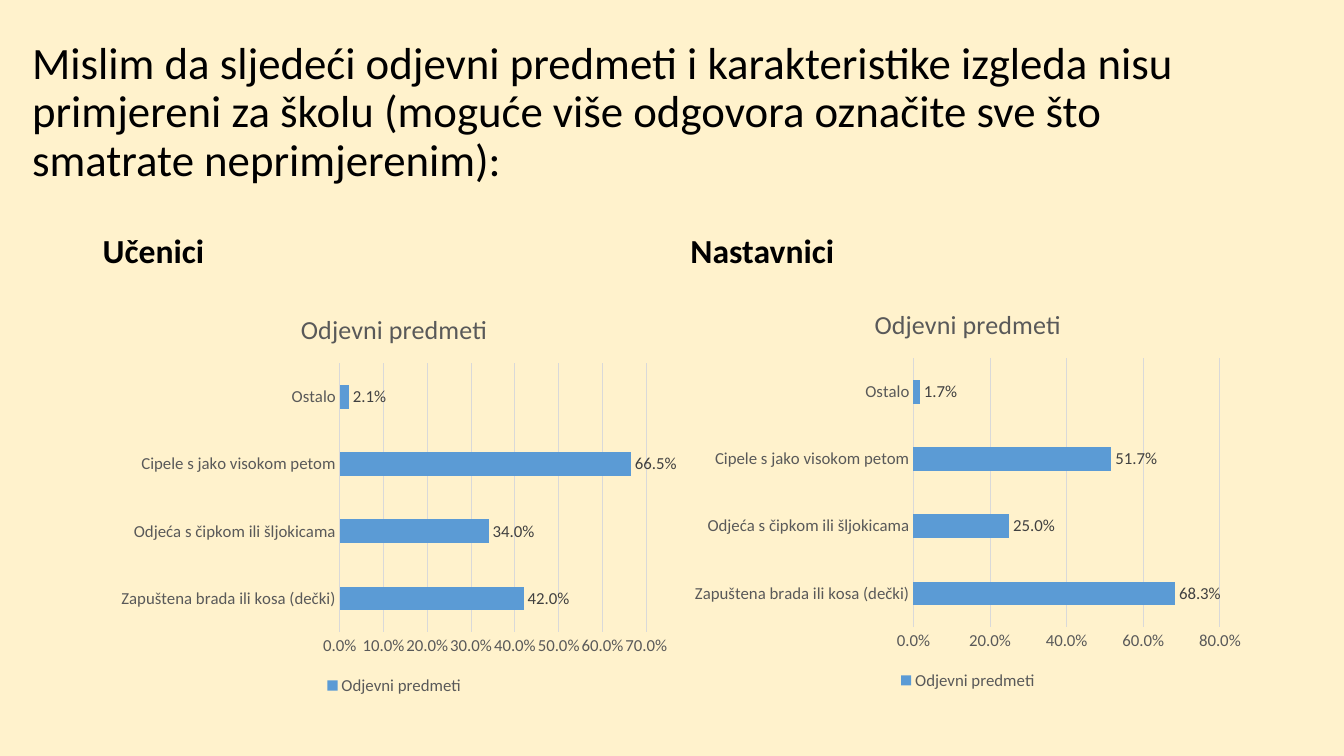
from pptx import Presentation
from pptx.chart.data import CategoryChartData
from pptx.dml.color import RGBColor
from pptx.enum.chart import XL_CHART_TYPE, XL_LABEL_POSITION, XL_LEGEND_POSITION, XL_TICK_MARK
from pptx.enum.text import MSO_ANCHOR
from pptx.util import Inches, Pt

BAR = XL_CHART_TYPE.BAR_CLUSTERED
OUTSIDE_END = XL_LABEL_POSITION.OUTSIDE_END
BOTTOM = XL_LEGEND_POSITION.BOTTOM
NO_TICK = XL_TICK_MARK.NONE
MIDDLE, LOW = MSO_ANCHOR.MIDDLE, MSO_ANCHOR.BOTTOM

# Content
FONT = "Calibri"
BACKGROUND, BLACK, GREY, DARK, GRID, BLUE = (
    "FFF2CC", "000000", "595959", "404040", "D9D9D9", "5B9BD5")
PERCENT = "0.0%"
TITLE = ("Mislim da sljedeći odjevni predmeti i karakteristike izgleda nisu "
         "primjereni za školu (moguće više odgovora označite sve što\v"
         "smatrate neprimjerenim):")
TOPIC = "Odjevni predmeti"
ITEMS = ["Zapuštena brada ili kosa (dečki)", "Odjeća s čipkom ili šljokicama",
         "Cipele s jako visokom petom", "Ostalo"]
GROUPS = [
    {"name": "Učenici", "head": (0.92, 1.84, 5.64, 0.9), "chart": (1.09, 2.91, 5.64, 4.03),
     "values": [0.42, 0.34, 0.665, 0.021], "top": 0.7, "step": 0.1},
    {"name": "Nastavnici", "head": (6.75, 1.84, 5.67, 0.9), "chart": (6.78, 2.86, 5.64, 4.03),
     "values": [0.683, 0.25, 0.517, 0.017], "top": 0.8, "step": 0.2},
]


def color(value):
    return RGBColor.from_string(value)


def set_all(obj, **values):
    for name, value in values.items():
        setattr(obj, name, value)


def style_font(font, size, hex_color, bold=False):
    set_all(font, name=FONT, size=Pt(size), bold=bold)
    font.color.rgb = color(hex_color)


def style_line(line, hex_color):
    line.color.rgb = color(hex_color)
    line.width = Pt(0.75)


def add_text(slide, box, text, size, anchor, bold=False):
    tf = slide.shapes.add_textbox(*map(Inches, box)).text_frame
    set_all(tf, word_wrap=True, vertical_anchor=anchor)
    p = tf.paragraphs[0]
    p.text = text
    p.line_spacing = 0.9
    style_font(p.font, size, BLACK, bold)
    for r in p.runs:
        style_font(r.font, size, BLACK, bold)


def add_bars(slide, group):
    data = CategoryChartData(number_format=PERCENT)
    data.categories = ITEMS
    data.add_series(TOPIC, group["values"])
    chart = slide.shapes.add_chart(BAR, *map(Inches, group["chart"]), data).chart
    style_font(chart.font, 10, BLACK)

    # Title and legend
    chart.has_title = True
    tf = chart.chart_title.text_frame
    tf.text = TOPIC
    style_font(tf.paragraphs[0].runs[0].font, 18.6, GREY)
    chart.has_legend = True
    set_all(chart.legend, position=BOTTOM, include_in_layout=False)
    style_font(chart.legend.font, 12, GREY)

    # Axes
    items, scale = chart.category_axis, chart.value_axis
    for axis in (items, scale):
        set_all(axis, major_tick_mark=NO_TICK, minor_tick_mark=NO_TICK)
        style_font(axis.tick_labels.font, 12, GREY)
    items.has_major_gridlines = False
    style_line(items.format.line, GRID)
    set_all(scale, minimum_scale=0, maximum_scale=group["top"],
            major_unit=group["step"], has_major_gridlines=True)
    scale.format.line.fill.background()
    style_line(scale.major_gridlines.format.line, GRID)
    set_all(scale.tick_labels, number_format=PERCENT, number_format_is_linked=False)

    # Bars and their values
    plot = chart.plots[0]
    set_all(plot, gap_width=182, vary_by_categories=False, has_data_labels=True)
    fill = plot.series[0].format.fill
    fill.solid()
    fill.fore_color.rgb = color(BLUE)
    labels = plot.data_labels
    set_all(labels, show_value=True, position=OUTSIDE_END,
            number_format=PERCENT, number_format_is_linked=False)
    style_font(labels.font, 12, DARK)


def main():
    prs = Presentation()
    set_all(prs, slide_width=Inches(13.33), slide_height=Inches(7.5))
    slide = prs.slides.add_slide(prs.slide_layouts[6])
    slide.background.fill.solid()
    slide.background.fill.fore_color.rgb = color(BACKGROUND)

    add_text(slide, (0.22, 0.4, 12.73, 1.45), TITLE, 32, MIDDLE)
    for group in GROUPS:
        add_text(slide, group["head"], group["name"], 24, LOW, bold=True)
    for group in reversed(GROUPS):
        add_bars(slide, group)
    prs.save("out.pptx")


if __name__ == "__main__":
    main()
